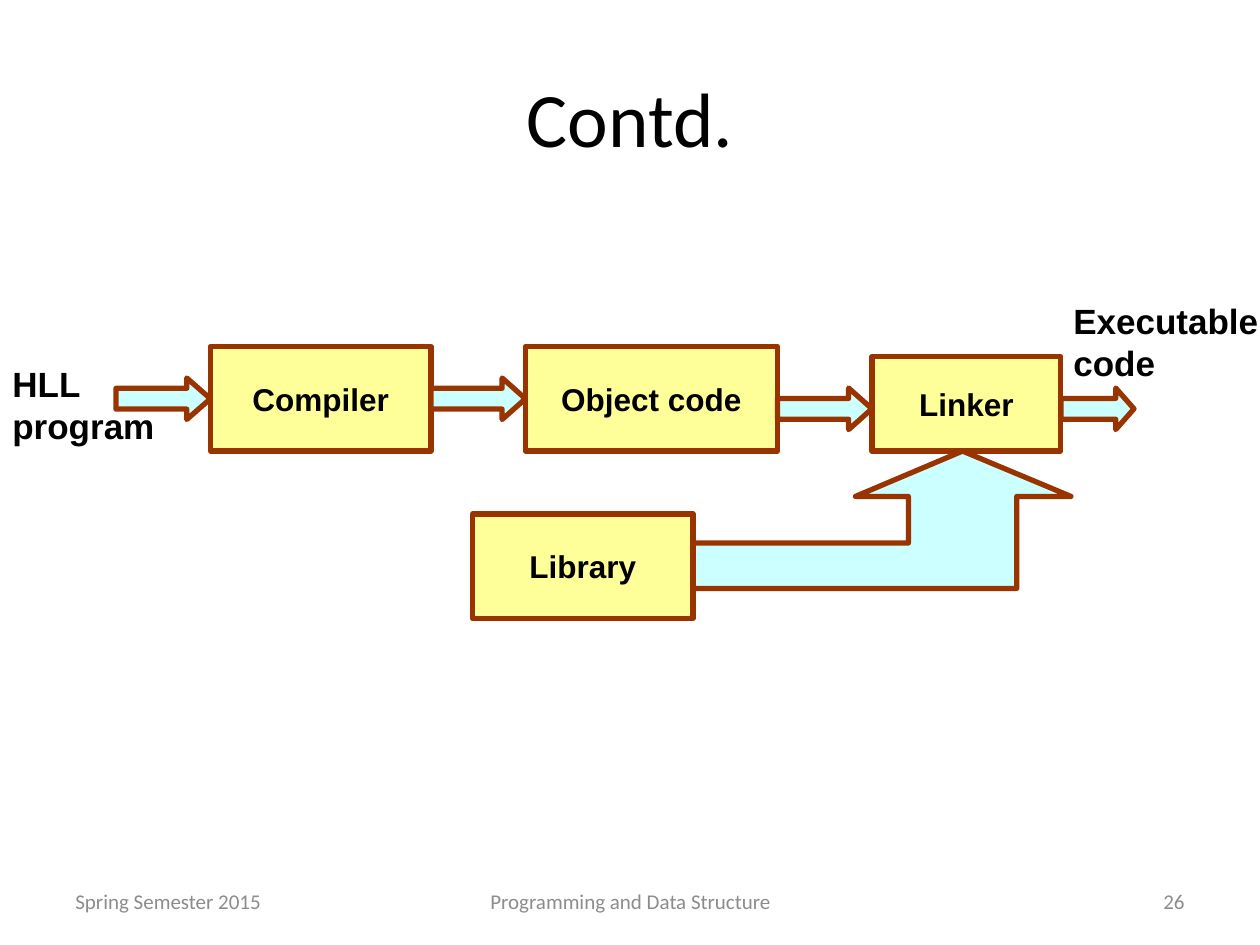
from dataclasses import dataclass
from pptx import Presentation
from pptx.dml.color import RGBColor
from pptx.enum.shapes import MSO_SHAPE
from pptx.enum.text import MSO_ANCHOR, MSO_AUTO_SIZE, PP_ALIGN
from pptx.util import Inches, Pt


@dataclass(frozen=True)
class Theme:
    ink: str = "000000"
    footer: str = "8C8C8C"
    box: str = "FFFF99"
    arrow: str = "CCFFFF"
    outline: str = "993300"
    outline_width: int = 3
    heading_font: str = "Calibri"
    diagram_font: str = "Arial"
    title_size: int = 44
    label_size: int = 20
    box_size: int = 18
    footer_size: int = 12


theme = Theme()


def write(shape, text, *, size, font=theme.diagram_font, color=theme.ink, bold=False,
          align=PP_ALIGN.LEFT, anchor=MSO_ANCHOR.MIDDLE, wrap=True):
    frame = shape.text_frame
    frame.word_wrap = wrap
    frame.vertical_anchor = anchor
    paragraph = frame.paragraphs[0]
    paragraph.alignment = align
    run = paragraph.add_run()
    run.text = text
    run.font.name = font
    run.font.size = Pt(size)
    run.font.bold = bold
    run.font.color.rgb = RGBColor.from_string(color)


def paint(shape, fill):
    shape.shadow.inherit = False
    shape.fill.solid()
    shape.fill.fore_color.rgb = RGBColor.from_string(fill)
    shape.line.color.rgb = RGBColor.from_string(theme.outline)
    shape.line.width = Pt(theme.outline_width)


deck = Presentation()
deck.slide_width, deck.slide_height = Inches(10), Inches(7.5)
slide = deck.slides.add_slide(deck.slide_layouts[5])
shapes = slide.shapes

# Title
title = shapes.title
title.left, title.top = Inches(0.5), Inches(0.3)
title.width, title.height = Inches(9), Inches(1.25)
write(title, "Contd.", size=theme.title_size, font=theme.heading_font, align=PP_ALIGN.CENTER)

# Footer: date, course, page number
for text, left, width, align in [
    ("Spring Semester 2015", 0.5, 2.33, PP_ALIGN.LEFT),
    ("Programming and Data Structure", 3.42, 3.17, PP_ALIGN.CENTER),
    ("26", 7.17, 2.33, PP_ALIGN.RIGHT),
]:
    footer = shapes.add_textbox(Inches(left), Inches(6.95), Inches(width), Inches(0.4))
    write(footer, text, size=theme.footer_size, font=theme.heading_font,
          color=theme.footer, align=align)

# Bent arrow from the library up to the linker
bend = [(Inches(x), Inches(y)) for x, y in [
    (7.64, 3.58), (6.79, 3.94), (7.21, 3.94), (7.21, 4.31), (5.5, 4.31),
    (5.5, 4.67), (8.07, 4.67), (8.07, 3.94), (8.5, 3.94),
]]
outline = shapes.build_freeform(*bend[0])
outline.add_line_segments(bend[1:], close=True)
paint(outline.convert_to_shape(), theme.arrow)

# Stages of the build
for text, left, top, width, height in [
    ("Compiler", 1.67, 2.75, 1.75, 0.83),
    ("Object code", 4.17, 2.75, 2, 0.83),
    ("Linker", 6.92, 2.83, 1.5, 0.75),
    ("Library", 3.75, 4.08, 1.75, 0.83),
]:
    stage = shapes.add_shape(MSO_SHAPE.RECTANGLE, Inches(left), Inches(top),
                             Inches(width), Inches(height))
    paint(stage, theme.box)
    write(stage, text, size=theme.box_size, bold=True, align=PP_ALIGN.CENTER, wrap=False)

# Arrows between the stages
for left, top, width, head in [
    (0.92, 3, 0.75, 0.57),
    (3.42, 3, 0.75, 0.56),
    (6.17, 3.08, 0.75, 0.56),
    (8.42, 3.08, 0.58, 0.44),
]:
    flow = shapes.add_shape(MSO_SHAPE.RIGHT_ARROW, Inches(left), Inches(top),
                            Inches(width), Inches(0.33))
    flow.adjustments[1] = head
    paint(flow, theme.arrow)

# Input and output labels
for text, left, top, width in [
    ("HLL program", 0, 2.83, 1.33),
    ("Executable code", 8.42, 2.33, 1.83),
]:
    label = shapes.add_textbox(Inches(left), Inches(top), Inches(width), Inches(0.77))
    write(label, text, size=theme.label_size, bold=True, anchor=MSO_ANCHOR.TOP)
    label.text_frame.auto_size = MSO_AUTO_SIZE.SHAPE_TO_FIT_TEXT

deck.save("out.pptx")
